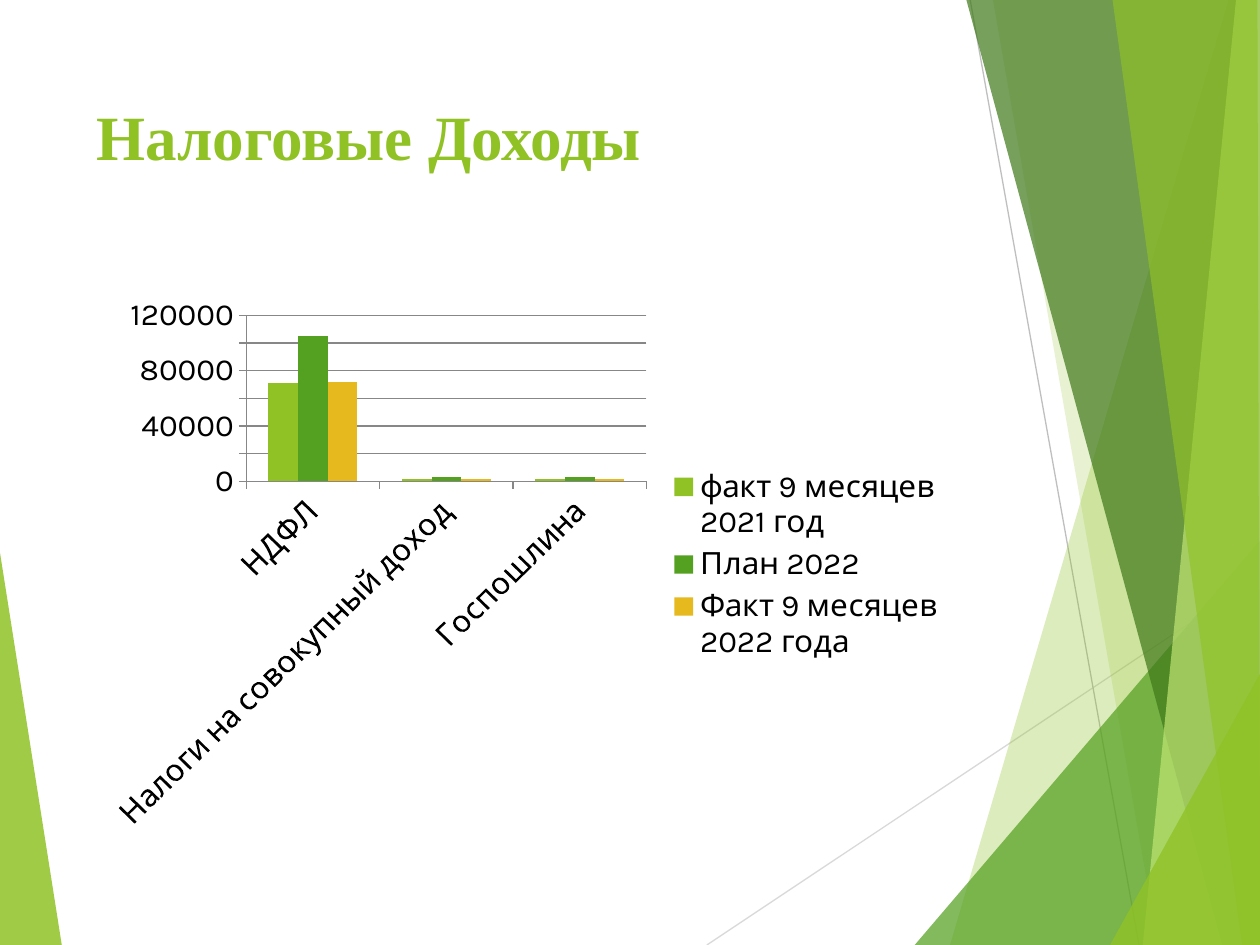
from pptx import Presentation
from pptx import util as u
from pptx.chart.data import CategoryChartData
from pptx.dml.color import RGBColor
from pptx.enum import chart as ch, text
from pptx.oxml.ns import qn
from lxml import etree

Pt = u.Pt
W, H = 720, 540
GREEN, LEAF, GOLD = "90C226", "54A021", "E6B91E"

# Facets as fractions of the box: points, colour, opacity in percent
LEFT_FACET = [([(0, 0.585), (0.049, 1), (0, 1)], GREEN, 85)]
RIGHT_FACETS = [
    ([(0.975, 0), (0.754, 1), (1, 1), (1, 0)], GREEN, 30),
    ([(0.788, 0), (0.919, 1), (1, 1), (1, 0)], GREEN, 20),
    ([(0.726, 1), (1, 0.572), (1, 1)], LEAF, 72),
    ([(0.767, 0), (0.97, 1), (1, 1), (1, 0)], "3F7819", 70),
    ([(0.981, 0), (0.907, 1), (1, 1), (1, 0)], "C0E474", 70),
    ([(0.883, 0), (0.986, 1), (1, 1), (0.998, 0)], GREEN, 65),
    ([(0.881, 1), (1, 0.713), (1, 1)], GREEN, 80),
]
RAYS = [((0.561, 1), (1, 0.61), "D9D9D9"), ((0.77, 0), (0.904, 1), "BFBFBF")]


def rgb(value):
    return RGBColor.from_string(value)


def paint(fill, color):
    fill.solid()
    fill.fore_color.rgb = rgb(color)


def add_facets(s, facets, x, y, w, h):
    for points, color, opacity in facets:
        pts = [(Pt(x + w * fx), Pt(y + h * fy)) for fx, fy in points]
        fb = s.shapes.build_freeform(*pts[0])
        fb.add_line_segments(pts[1:], close=True)
        sp = fb.convert_to_shape()
        sp.shadow.inherit = False
        sp.line.fill.background()
        paint(sp.fill, color)
        clr = sp.fill._xPr.find(".//" + qn("a:srgbClr"))
        etree.SubElement(clr, qn("a:alpha")).set("val", str(opacity * 1000))


def add_rays(s, x, y, w, h):
    for (ax, ay), (bx, by), color in RAYS:
        ln = s.shapes.add_connector(1, Pt(x + w * ax), Pt(y + h * ay),
                                    Pt(x + w * bx), Pt(y + h * by))
        ln.line.color.rgb = rgb(color)
        ln.line.width = Pt(0.75)
        etree.SubElement(ln._element.spPr, qn("a:effectLst"))


def add_title(s, x, y, w, h):
    sp = s.shapes.title
    sp.left, sp.top, sp.width, sp.height = Pt(x), Pt(y), Pt(w), Pt(h)
    tf = sp.text_frame
    tf.word_wrap = True
    tf.vertical_anchor = text.MSO_ANCHOR.TOP
    tf.margin_top = Pt(8)
    p = tf.paragraphs[0]
    p.alignment = text.PP_ALIGN.LEFT
    r = p.add_run()
    r.text = "Налоговые Доходы"
    r.font.name, r.font.size, r.font.bold = "Times New Roman", Pt(36), True
    r.font.color.rgb = rgb(GREEN)


def add_tax_chart(s, x, y, w, h):
    data = CategoryChartData()
    data.categories = ["НДФЛ", "Налоги на совокупный доход", "Госпошлина"]
    data.add_series("факт 9 месяцев 2021 год", (71000, 2000, 2000))
    data.add_series("План 2022", (105000, 3000, 3000))
    data.add_series("Факт 9 месяцев 2022 года", (72000, 2000, 2000))
    chart = s.shapes.add_chart(ch.XL_CHART_TYPE.COLUMN_CLUSTERED,
                               Pt(x), Pt(y), Pt(w), Pt(h), data).chart
    chart.has_title = False
    chart.font.name, chart.font.size = "Karla", Pt(18)
    chart.font.color.rgb = rgb("000000")

    # Columns
    plot = chart.plots[0]
    plot.gap_width, plot.overlap, plot.vary_by_categories = 150, 0, False
    for series, color in zip(plot.series, (GREEN, LEAF, GOLD)):
        paint(series.format.fill, color)

    # Axes and grid
    value = chart.value_axis
    value.minimum_scale, value.maximum_scale, value.major_unit = 0, 120000, 20000
    value.has_major_gridlines = True
    for axis in (chart.category_axis, value):
        axis.major_tick_mark = ch.XL_TICK_MARK.OUTSIDE
    for part in (chart.category_axis, value, value.major_gridlines):
        part.format.line.color.rgb = rgb("878787")
        part.format.line.width = Pt(0.75)

    # Legend
    chart.has_legend = True
    chart.legend.position = ch.XL_LEGEND_POSITION.RIGHT
    chart.legend.include_in_layout = False


def main():
    prs = Presentation()
    prs.slide_width, prs.slide_height = Pt(W), Pt(H)
    s = prs.slides.add_slide(prs.slide_layouts[5])
    add_facets(s, LEFT_FACET, 0, 0, W, H)
    add_rays(s, 0, 0, W, H)
    add_facets(s, RIGHT_FACETS, 0, 0, W, H)
    add_title(s, 48, 48, 500, 104)
    add_tax_chart(s, 48, 170, 500, 305)
    prs.save("out.pptx")


if __name__ == "__main__":
    main()
